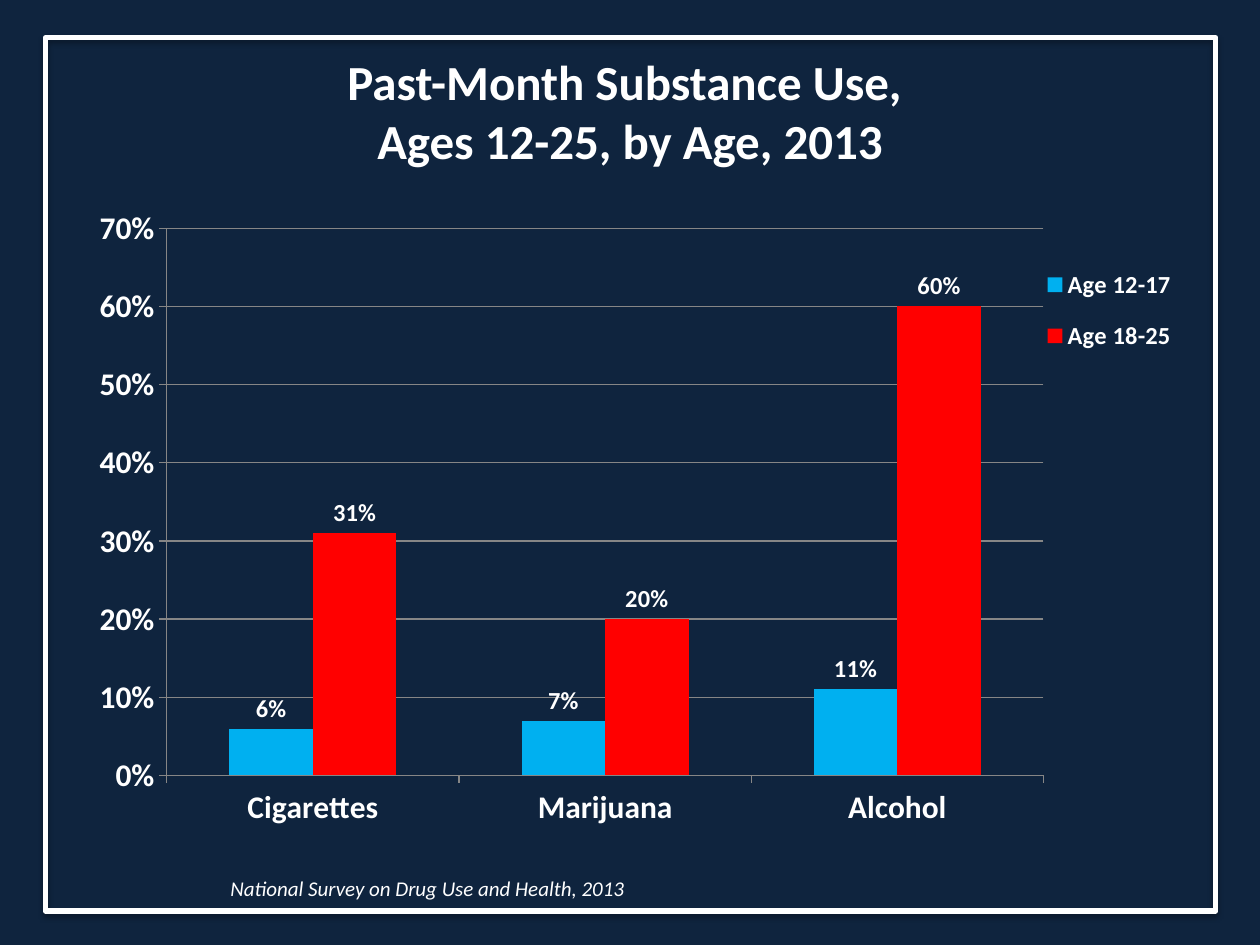
from dataclasses import dataclass

from lxml import etree
from pptx import Presentation
from pptx.chart.data import CategoryChartData
from pptx.dml.color import RGBColor
from pptx.enum.chart import XL_CHART_TYPE, XL_LABEL_POSITION, XL_LEGEND_POSITION, XL_TICK_MARK
from pptx.enum.shapes import MSO_SHAPE
from pptx.enum.text import MSO_ANCHOR, PP_ALIGN
from pptx.oxml import parse_xml
from pptx.oxml.ns import nsdecls, qn
from pptx.util import Inches, Pt

COLUMN = XL_CHART_TYPE.COLUMN_CLUSTERED
ABOVE = XL_LABEL_POSITION.OUTSIDE_END
RIGHT = XL_LEGEND_POSITION.RIGHT
OUT = XL_TICK_MARK.OUTSIDE
RECT = MSO_SHAPE.RECTANGLE
TOP, MIDDLE = MSO_ANCHOR.TOP, MSO_ANCHOR.MIDDLE
LEFT, CENTER = PP_ALIGN.LEFT, PP_ALIGN.CENTER


@dataclass(frozen=True)
class Theme:
    font: str = "Calibri"
    ink: str = "FFFFFF"
    dark: str = "0F243E"
    navy: str = "102640"
    grid: str = "868686"
    young: str = "00B0F0"
    adult: str = "FF0000"
    title: int = 28
    axis: int = 18
    label: int = 14
    note: int = 12


THEME = Theme()
CATS = ["Cigarettes", "Marijuana", "Alcohol"]
SERIES = [
    ("Age 12-17", (0.06, 0.07, 0.11), THEME.young),
    ("Age 18-25", (0.31, 0.20, 0.60), THEME.adult),
]


def rgb(code):
    return RGBColor.from_string(code)


def style(font, size, bold=False, italic=False):
    font.name, font.size = THEME.font, Pt(size)
    font.bold, font.italic = bold, italic
    font.color.rgb = rgb(THEME.ink)


def add_text(slide, box, text, size, align=LEFT, anchor=TOP, **look):
    frame = slide.shapes.add_textbox(*map(Inches, box)).text_frame
    frame.word_wrap = True
    frame.vertical_anchor = anchor
    para = frame.paragraphs[0]
    para.text = text
    para.alignment = align
    for run in para.runs:
        style(run.font, size, **look)


def add_back(slide):
    fill = slide.background.fill
    fill.gradient()
    fill.gradient_angle = 90
    stops = ((0, THEME.dark), (0.19, THEME.navy))
    for stop, (place, code) in zip(fill.gradient_stops, stops):
        stop.position = place
        stop.color.rgb = rgb(code)


def add_frame(slide, box):
    """Draw the white border with its soft shadow."""
    shape = slide.shapes.add_shape(RECT, *map(Inches, box))
    shape.fill.background()
    shape.line.color.rgb = rgb(THEME.ink)
    shape.line.width = Pt(3)
    shape.shadow.inherit = False
    effects = shape._element.spPr.find(qn("a:effectLst"))
    effects.append(parse_xml(
        f'<a:outerShdw {nsdecls("a")} blurRad="{Pt(3.1)}" dist="{Pt(1.8)}" '
        'dir="5400000" rotWithShape="0"><a:srgbClr val="000000">'
        '<a:alpha val="35000"/></a:srgbClr></a:outerShdw>'))


def set_layout(part, box, inner=False):
    """Place a chart part by fractions of the chart's size."""
    old = part.find(qn("c:layout"))
    if old is not None:
        part.remove(old)
    layout = etree.Element(qn("c:layout"))
    manual = etree.SubElement(layout, qn("c:manualLayout"))
    items = [("layoutTarget", "inner")] if inner else []
    items += [("xMode", "edge"), ("yMode", "edge"), *zip("xywh", box)]
    for name, value in items:
        etree.SubElement(manual, qn(f"c:{name}")).set("val", str(value))
    before = part.find(qn("c:legendPos"))
    if before is None:
        part.insert(0, layout)
    else:
        before.addnext(layout)


def style_axes(chart):
    for axis in (chart.category_axis, chart.value_axis):
        axis.major_tick_mark = OUT
        axis.format.line.color.rgb = rgb(THEME.grid)
        style(axis.tick_labels.font, THEME.axis, bold=True)
    axis = chart.value_axis
    axis.minimum_scale, axis.maximum_scale, axis.major_unit = 0, 0.7, 0.1
    axis.has_major_gridlines = True
    axis.major_gridlines.format.line.color.rgb = rgb(THEME.grid)
    axis.tick_labels.number_format = "0%"
    axis.tick_labels.number_format_is_linked = False


def style_bars(plot):
    plot.gap_width, plot.overlap = 150, 0
    plot.vary_by_categories = False
    for bars, (_, _, code) in zip(plot.series, SERIES):
        bars.format.fill.solid()
        bars.format.fill.fore_color.rgb = rgb(code)
        labels = bars.data_labels
        labels.show_value = True
        labels.position = ABOVE
        labels.number_format = "0%"
        labels.number_format_is_linked = False
        style(labels.font, THEME.label, bold=True)


def add_columns(slide, box):
    data = CategoryChartData(number_format="0%")
    data.categories = CATS
    for name, values, _ in SERIES:
        data.add_series(name, values)
    chart = slide.shapes.add_chart(COLUMN, *map(Inches, box), data).chart
    chart.has_title = False
    style(chart.font, THEME.axis, bold=True)
    style_axes(chart)
    style_bars(chart.plots[0])
    chart.has_legend = True
    legend = chart.legend
    legend.position = RIGHT
    legend.include_in_layout = False
    style(legend.font, THEME.label, bold=True)
    set_layout(legend._element, (0.85, 0.15, 0.14, 0.18))
    area = chart._chartSpace.chart.plotArea
    set_layout(area, (0.06, 0.12, 0.8, 0.8), inner=True)


def main():
    deck = Presentation()
    deck.slide_width, deck.slide_height = Inches(10), Inches(7.5)
    slide = deck.slides.add_slide(deck.slide_layouts[6])
    add_back(slide)
    add_frame(slide, (0.36, 0.3, 9.29, 6.93))
    add_text(slide, (0, 0.4, 10, 0.95),
             "Past-Month Substance Use, \vAges 12-25, by Age, 2013",
             THEME.title, align=CENTER, anchor=MIDDLE, bold=True)
    add_text(slide, (1.73, 6.9, 5.13, 0.3),
             "National Survey on Drug Use and Health, 2013",
             THEME.note, italic=True)
    add_columns(slide, (0.79, 1.16, 8.71, 5.43))
    deck.save("out.pptx")


if __name__ == "__main__":
    main()
